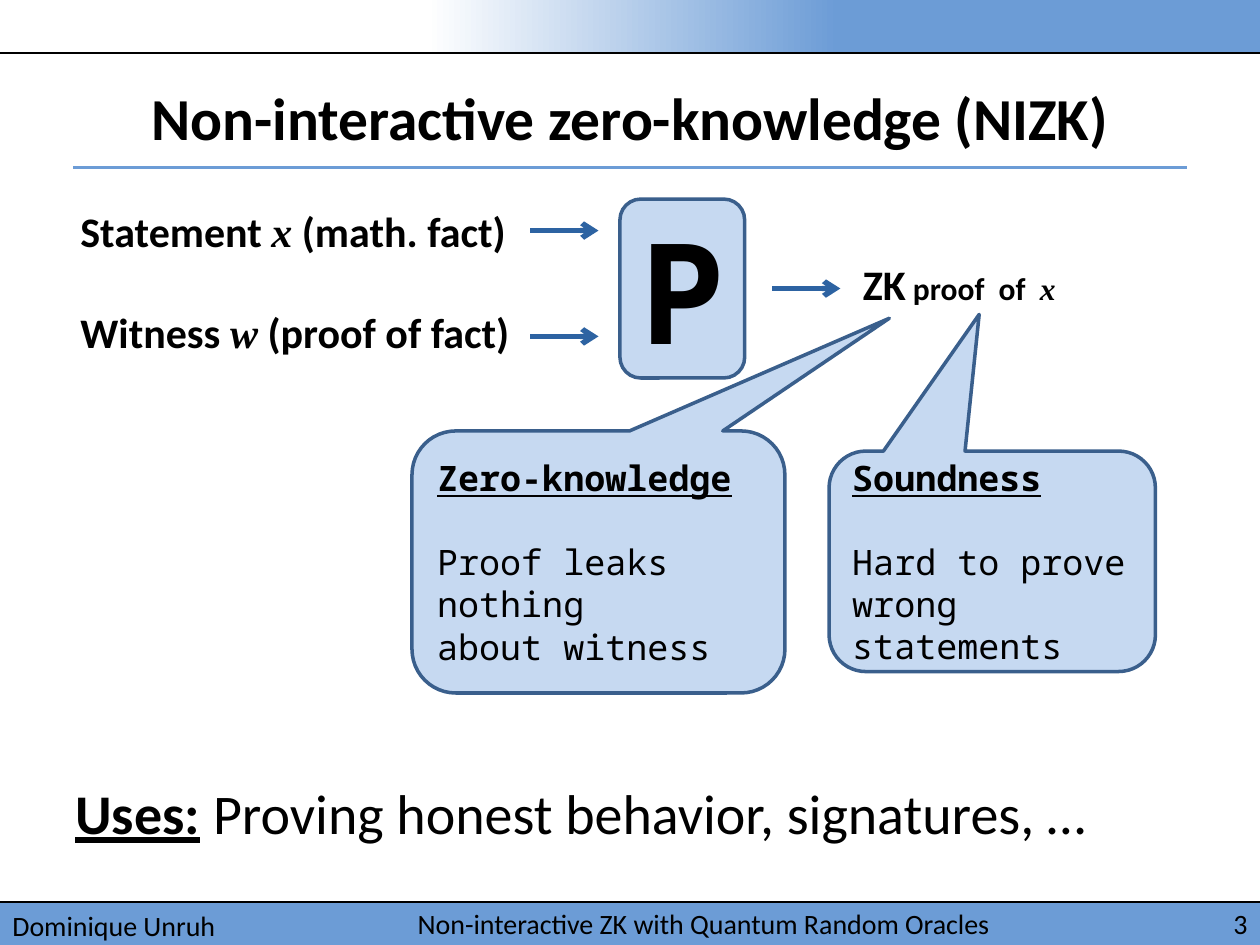
import pptx
import pptx.util
import pptx.dml.color
import pptx.enum.shapes
import pptx.enum.text
import pptx.oxml
import pptx.oxml.ns
from pptx.util import Inches, Pt

COLORS = {
    "black": "000000",
    "white": "FFFFFF",
    "bar": "6C9CD6",
    "box": "C6D9F1",
    "outline": "3A5F8C",
    "arrow": "2D63A2",
}
SANS, MONO, MATH = "Calibri", "Noto Sans Mono", "Times New Roman"
SHAPES = pptx.enum.shapes.MSO_SHAPE
ALIGN = pptx.enum.text.PP_ALIGN
ANCHOR = pptx.enum.text.MSO_ANCHOR


def rgb(name):
    return pptx.dml.color.RGBColor.from_string(COLORS[name])


def add_run(paragraph, text, size, font=SANS, bold=False, italic=False, underline=False):
    run = paragraph.add_run()
    run.text = text
    run.font.name = font
    run.font.size = Pt(size)
    run.font.bold = bold
    run.font.italic = italic
    run.font.underline = underline
    run.font.color.rgb = rgb("black")


def add_text_box(slide, box, align=ALIGN.LEFT, anchor=ANCHOR.TOP, wrap=True):
    """Add an empty text box and return its text frame."""
    frame = slide.shapes.add_textbox(*map(Inches, box)).text_frame
    frame.word_wrap = wrap
    if not wrap:
        frame.auto_size = pptx.enum.text.MSO_AUTO_SIZE.SHAPE_TO_FIT_TEXT
    frame.vertical_anchor = anchor
    frame.paragraphs[0].alignment = align
    return frame


def add_block(slide, kind, box, fill=None, outline=None):
    """Add a flat shape; without a fill name the caller sets the fill."""
    shape = slide.shapes.add_shape(kind, *map(Inches, box))
    shape.shadow.inherit = False
    if fill:
        shape.fill.solid()
        shape.fill.fore_color.rgb = rgb(fill)
    if outline:
        shape.line.color.rgb = rgb(outline)
        shape.line.width = Pt(2)
    else:
        shape.line.fill.background()
    shape.text_frame.word_wrap = True
    shape.text_frame.vertical_anchor = ANCHOR.MIDDLE
    return shape


def add_line(slide, left, top, length, color, width, arrow=False):
    """Add a horizontal line, with an arrowhead at its right end if asked."""
    line = slide.shapes.add_connector(
        pptx.enum.shapes.MSO_CONNECTOR.STRAIGHT,
        Inches(left), Inches(top), Inches(left + length), Inches(top))
    line.line.color.rgb = rgb(color)
    line.line.width = Pt(width)
    if arrow:
        head = pptx.oxml.parse_xml(
            f'<a:tailEnd {pptx.oxml.ns.nsdecls("a")} type="arrow"/>')
        line.line._get_or_add_ln().append(head)
    line._element.spPr.append(
        pptx.oxml.parse_xml(f'<a:effectLst {pptx.oxml.ns.nsdecls("a")}/>'))


def add_header(slide, box):
    left, top, width, height = box
    bar = add_block(slide, SHAPES.RECTANGLE, (left + 2.73, top, width - 2.73, height))
    bar.fill.gradient()
    bar.fill.gradient_angle = 0
    for stop, position, color in zip(bar.fill.gradient_stops, (0.09, 0.54), ("white", "bar")):
        stop.position = position
        stop.color.rgb = rgb(color)
    add_line(slide, left, top + height, width, "black", 0.75)


def add_footer(slide, box):
    left, top, width, height = box
    add_block(slide, SHAPES.RECTANGLE, box, "bar")
    add_line(slide, left, top, width, "black", 0.75)
    entries = [
        (0, 2.73, "Dominique Unruh", ALIGN.LEFT, ANCHOR.TOP),
        (2.42, 6.33, "Non-interactive ZK with Quantum Random Oracles", ALIGN.CENTER, ANCHOR.MIDDLE),
        (9.33, 0.67, "3", ALIGN.RIGHT, ANCHOR.MIDDLE),
    ]
    for offset, entry_width, text, align, anchor in entries:
        frame = add_text_box(slide, (left + offset, top, entry_width, height), align, anchor)
        add_run(frame.paragraphs[0], text, 16)


def add_title(slide, box):
    left, top, width, height = box
    add_line(slide, left, top + height - 0.02, width, "bar", 2)
    frame = add_text_box(slide, box, ALIGN.CENTER, ANCHOR.MIDDLE)
    add_run(frame.paragraphs[0], "Non-interactive zero-knowledge (NIZK)", 34, bold=True)


def add_prover(slide, box):
    """Draw the inputs, the prover P and the resulting proof."""
    left, top, width, height = box
    frame = add_text_box(slide, (left, top, 3.67, 1.31), wrap=False)
    inputs = [("Statement ", "x", " (math. fact)"), ("Witness ", "w", " (proof of fact)")]
    for index, (label, symbol, meaning) in enumerate(inputs):
        paragraph = frame.add_paragraph() if index else frame.paragraphs[0]
        if index:
            paragraph.space_before = Pt(29.3)
        add_run(paragraph, label, 24, bold=True)
        add_run(paragraph, symbol, 24, MATH, bold=True, italic=True)
        add_run(paragraph, meaning, 24, bold=True)

    prover = add_block(slide, SHAPES.ROUNDED_RECTANGLE,
                       (left + 4.38, top, 0.99, height), "box", "outline")
    paragraph = prover.text_frame.paragraphs[0]
    paragraph.alignment = ALIGN.CENTER
    add_run(paragraph, "P", 80, MONO, bold=True)

    for x, y in [(3.67, 0.25), (3.67, 1.09), (5.59, 0.71)]:
        add_line(slide, left + x, top + y, 0.54, "arrow", 3, arrow=True)

    frame = add_text_box(slide, (left + width - 1.74, top + 0.42, 1.74, 0.5), wrap=False)
    add_run(frame.paragraphs[0], "ZK", 24, bold=True)
    add_run(frame.paragraphs[0], " proof  of  ", 18, bold=True)
    add_run(frame.paragraphs[0], "x", 18, MATH, bold=True, italic=True)


def add_callout(slide, box, tip, heading, lines):
    """Draw a callout whose tip is given as fractions of its size from its centre."""
    callout = add_block(slide, SHAPES.ROUNDED_RECTANGULAR_CALLOUT, box, "box", "outline")
    for index, value in enumerate((*tip, 0.167)):
        callout.adjustments[index] = value
    title = callout.text_frame.paragraphs[0]
    add_run(title, heading, 20, MONO, bold=True, underline=True)
    body = callout.text_frame.add_paragraph()
    body.space_before = Pt(24)
    for index, line in enumerate(lines):
        if index:
            body.add_line_break()
        add_run(body, line, 20, MONO)
    for paragraph in (title, body):
        paragraph.alignment = ALIGN.LEFT


def add_uses(slide, box):
    paragraph = add_text_box(slide, box).paragraphs[0]
    add_run(paragraph, "Uses:", 32, bold=True, underline=True)
    add_run(paragraph, " Proving honest behavior, signatures, …", 32)


def main():
    presentation = pptx.Presentation()
    presentation.slide_width = Inches(10)
    presentation.slide_height = Inches(7.5)
    slide = presentation.slides.add_slide(presentation.slide_layouts[6])

    add_header(slide, (0, 0, 10, 0.42))
    add_footer(slide, (0, 7.16, 10, 0.34))
    add_title(slide, (0.58, 0.5, 8.84, 0.85))
    add_prover(slide, (0.54, 1.58, 7.95, 1.42))
    add_callout(slide, (3.27, 3.42, 2.96, 2.08), (0.78, -0.93),
                "Zero-knowledge", ["Proof leaks nothing", "about witness"])
    add_callout(slide, (6.58, 3.58, 2.59, 1.75), (-0.04, -1.12),
                "Soundness", ["Hard to prove", "wrong statements"])
    add_uses(slide, (0.5, 6.13, 9, 0.78))

    presentation.save("out.pptx")


if __name__ == "__main__":
    main()
